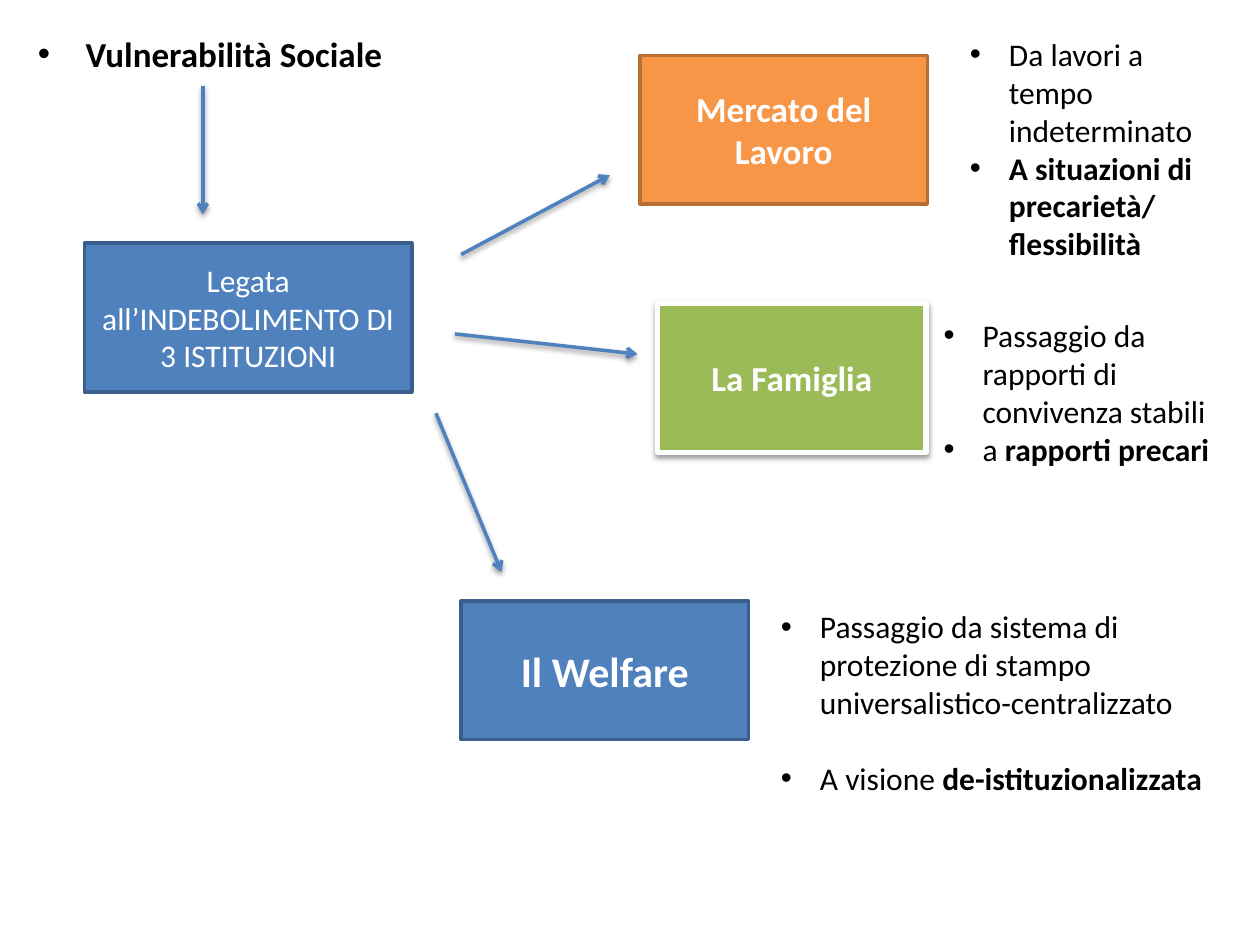
from dataclasses import dataclass

from lxml import etree
from pptx import Presentation
from pptx.dml.color import RGBColor
from pptx.enum.shapes import MSO_CONNECTOR, MSO_SHAPE
from pptx.enum.text import MSO_ANCHOR, MSO_AUTO_SIZE, PP_ALIGN
from pptx.oxml.ns import qn
from pptx.util import Emu, Pt

RECTANGLE = MSO_SHAPE.RECTANGLE
STRAIGHT = MSO_CONNECTOR.STRAIGHT
MIDDLE = MSO_ANCHOR.MIDDLE
GROW = MSO_AUTO_SIZE.SHAPE_TO_FIT_TEXT
CENTER = PP_ALIGN.CENTER
JUSTIFY = PP_ALIGN.JUSTIFY

FONT = "Calibri"
PX_PER_INCH = 100
EMU_PER_PX = 914400 // PX_PER_INCH
COLORS = {
    "black": "000000",
    "white": "FFFFFF",
    "blue": "4F81BD",
    "dark_blue": "3A5F8C",
    "orange": "F79646",
    "dark_orange": "B76F34",
    "green": "9BBB59",
}


@dataclass(frozen=True)
class Box:
    text: str
    left: int
    top: int
    width: int
    height: int
    fill: str
    line: str
    size: int = 20
    bold: bool = True
    line_width: int = 2
    shadow: bool = False


@dataclass(frozen=True)
class Arrow:
    start_x: int
    start_y: int
    end_x: int
    end_y: int


@dataclass(frozen=True)
class Bullet:
    plain: str = ""
    bold: str = ""
    space_before: int = 0


@dataclass(frozen=True)
class BulletList:
    left: int
    top: int
    width: int
    height: int
    bullets: tuple[Bullet, ...]


BOXES = (
    Box("Legata all’INDEBOLIMENTO DI 3 ISTITUZIONI", 67, 193, 260, 118,
        "blue", "dark_blue", size=18, bold=False),
    Box("Mercato del Lavoro", 508, 44, 228, 118, "orange", "dark_orange"),
    Box("La Famiglia", 522, 241, 213, 118, "green", "white", line_width=3, shadow=True),
    Box("Il Welfare", 366, 477, 228, 110, "blue", "dark_blue", size=24),
)
ARROWS = (
    Arrow(161, 68, 161, 170),
    Arrow(346, 328, 398, 454),
    Arrow(361, 265, 506, 281),
    Arrow(366, 202, 484, 139),
)
LISTS = (
    BulletList(760, 23, 213, 192, (
        Bullet("Da lavori a tempo indeterminato"),
        Bullet(bold="A situazioni di precarietà/ flessibilità"),
    )),
    BulletList(739, 246, 235, 131, (
        Bullet("Passaggio da rapporti di convivenza stabili"),
        Bullet("a ", "rapporti precari"),
    )),
    BulletList(610, 477, 370, 162, (
        Bullet("Passaggio da sistema di protezione di stampo universalistico-centralizzato"),
        Bullet("A visione ", "de-istituzionalizzata", space_before=22),
    )),
)


def px(value: int) -> Emu:
    return Emu(value * EMU_PER_PX)


def color(name: str) -> RGBColor:
    return RGBColor.from_string(COLORS[name])


def format_run(run, size: int, color_name: str, bold: bool) -> None:
    run.font.name = FONT
    run.font.size = Pt(size)
    run.font.bold = bold
    run.font.color.rgb = color(color_name)


def set_bullet(paragraph, indent: int) -> None:
    properties = paragraph._p.get_or_add_pPr()
    properties.set("marL", str(px(indent)))
    properties.set("indent", str(-px(indent)))
    etree.SubElement(properties, qn("a:buFont"), typeface="Arial")
    etree.SubElement(properties, qn("a:buChar"), char="•")


def add_shadow(effects) -> None:
    shadow = etree.SubElement(
        effects, qn("a:outerShdw"), blurRad=str(Pt(3.1)), dist=str(Pt(1.6)),
        dir="5400000", rotWithShape="0")
    shadow_color = etree.SubElement(shadow, qn("a:srgbClr"), val=COLORS["black"])
    etree.SubElement(shadow_color, qn("a:alpha"), val="38000")


def fill_heading(placeholder) -> None:
    placeholder.left, placeholder.top = px(20), px(21)
    placeholder.width, placeholder.height = px(961), px(717)
    placeholder.text_frame.text = "Vulnerabilità Sociale"
    paragraph = placeholder.text_frame.paragraphs[0]
    paragraph.alignment = JUSTIFY
    set_bullet(paragraph, 38)
    format_run(paragraph.runs[0], 20, "black", True)


def draw_box(slide, box: Box) -> None:
    shape = slide.shapes.add_shape(
        RECTANGLE, px(box.left), px(box.top), px(box.width), px(box.height))
    shape.fill.solid()
    shape.fill.fore_color.rgb = color(box.fill)
    shape.line.color.rgb = color(box.line)
    shape.line.width = Pt(box.line_width)
    shape.shadow.inherit = False
    if box.shadow:
        add_shadow(shape._element.spPr.find(qn("a:effectLst")))
    text_frame = shape.text_frame
    text_frame.word_wrap = True
    text_frame.vertical_anchor = MIDDLE
    text_frame.text = box.text
    paragraph = text_frame.paragraphs[0]
    paragraph.alignment = CENTER
    format_run(paragraph.runs[0], box.size, "white", box.bold)


def draw_arrow(slide, arrow: Arrow) -> None:
    connector = slide.shapes.add_connector(
        STRAIGHT, px(arrow.start_x), px(arrow.start_y), px(arrow.end_x), px(arrow.end_y))
    connector.line.color.rgb = color("blue")
    connector.line.width = Pt(2)
    properties = connector._element.spPr
    etree.SubElement(properties.find(qn("a:ln")), qn("a:tailEnd"), type="arrow")
    add_shadow(etree.SubElement(properties, qn("a:effectLst")))


def draw_list(slide, bullet_list: BulletList) -> None:
    text_box = slide.shapes.add_textbox(
        px(bullet_list.left), px(bullet_list.top),
        px(bullet_list.width), px(bullet_list.height))
    text_frame = text_box.text_frame
    text_frame.word_wrap = True
    text_frame.auto_size = GROW
    for index, bullet in enumerate(bullet_list.bullets):
        paragraph = text_frame.add_paragraph() if index else text_frame.paragraphs[0]
        paragraph.space_before = Pt(bullet.space_before)
        set_bullet(paragraph, 31)
        for text, bold in ((bullet.plain, False), (bullet.bold, True)):
            if text:
                run = paragraph.add_run()
                run.text = text
                format_run(run, 18, "black", bold)


def main() -> None:
    presentation = Presentation()
    presentation.slide_width = px(1000)
    presentation.slide_height = px(750)
    slide = presentation.slides.add_slide(presentation.slide_layouts[1])
    title = slide.shapes.title._element
    title.getparent().remove(title)
    fill_heading(slide.placeholders[1])
    for box in BOXES:
        draw_box(slide, box)
    for arrow in ARROWS:
        draw_arrow(slide, arrow)
    for bullet_list in LISTS:
        draw_list(slide, bullet_list)
    presentation.save("out.pptx")


if __name__ == "__main__":
    main()
